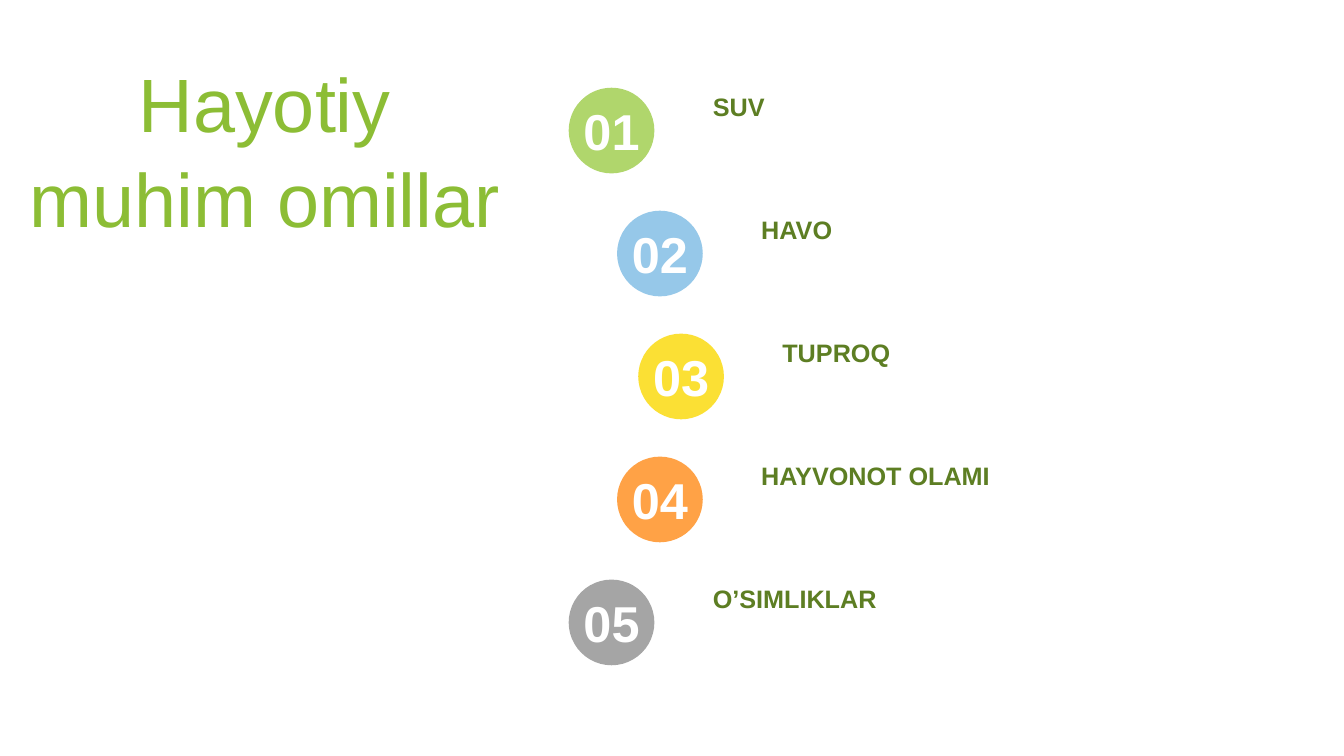
"""Builds a slide listing five vital factors beside a large title."""
from pptx import Presentation
from pptx.dml.color import RGBColor
from pptx.enum.shapes import MSO_SHAPE
from pptx.enum.text import MSO_ANCHOR, PP_ALIGN
from pptx.util import Inches, Pt

COLORS = {
    "title": "8CBD35",
    "label": "5D7E23",
    "number": "FFFFFF",
    "green": "B0D66C",
    "blue": "96C8E9",
    "yellow": "FBE034",
    "orange": "FFA246",
    "gray": "A5A5A5",
}
FACTORS = [
    ("SUV", "green", 5.64),
    ("HAVO", "blue", 6.12),
    ("TUPROQ", "yellow", 6.33),
    ("HAYVONOT OLAMI", "orange", 6.12),
    ("O’SIMLIKLAR", "gray", 5.64),
]
TOP, STEP, DIAMETER = 0.86, 1.22, 0.85


def add_text(shapes, text, box, size, color, bold=True, align=PP_ALIGN.LEFT, inset=0.12):
    tf = shapes.add_textbox(*[Inches(v) for v in box]).text_frame
    tf.word_wrap = True
    tf.margin_left = tf.margin_right = Inches(inset)
    tf.text = text
    p = tf.paragraphs[0]
    p.alignment = align
    p.font.name = "Arial"
    p.font.size = Pt(size)
    p.font.bold = bold
    p.font.color.rgb = RGBColor.from_string(COLORS[color])
    return tf


prs = Presentation()
prs.slide_width, prs.slide_height = Inches(13.33), Inches(7.5)
s = prs.slides.add_slide(prs.slide_layouts[6])

tf = add_text(s.shapes, "Hayotiy muhim omillar", (0.16, 0.5, 4.93, 1.92), 54, "title",
              bold=False, align=PP_ALIGN.CENTER, inset=0.1)
tf.vertical_anchor = MSO_ANCHOR.MIDDLE
tf.paragraphs[0].line_spacing = 1.05

for i, (name, color, left) in enumerate(FACTORS):
    top = TOP + i * STEP
    group = s.shapes.add_group_shape()
    add_text(group.shapes, name, (left + 1.31, top, 4.93, 0.4), 18, "label")
    sp = group.shapes.add_shape(MSO_SHAPE.OVAL, Inches(left), Inches(top + 0.01),
                                Inches(DIAMETER), Inches(DIAMETER))
    sp.shadow.inherit = False
    sp.fill.solid()
    sp.fill.fore_color.rgb = RGBColor.from_string(COLORS[color])
    sp.line.fill.background()
    add_text(group.shapes, f"{i + 1:02}", (left - 0.1, top + 0.08, 1.05, 0.71), 36, "number",
             align=PP_ALIGN.CENTER)

prs.save("out.pptx")
